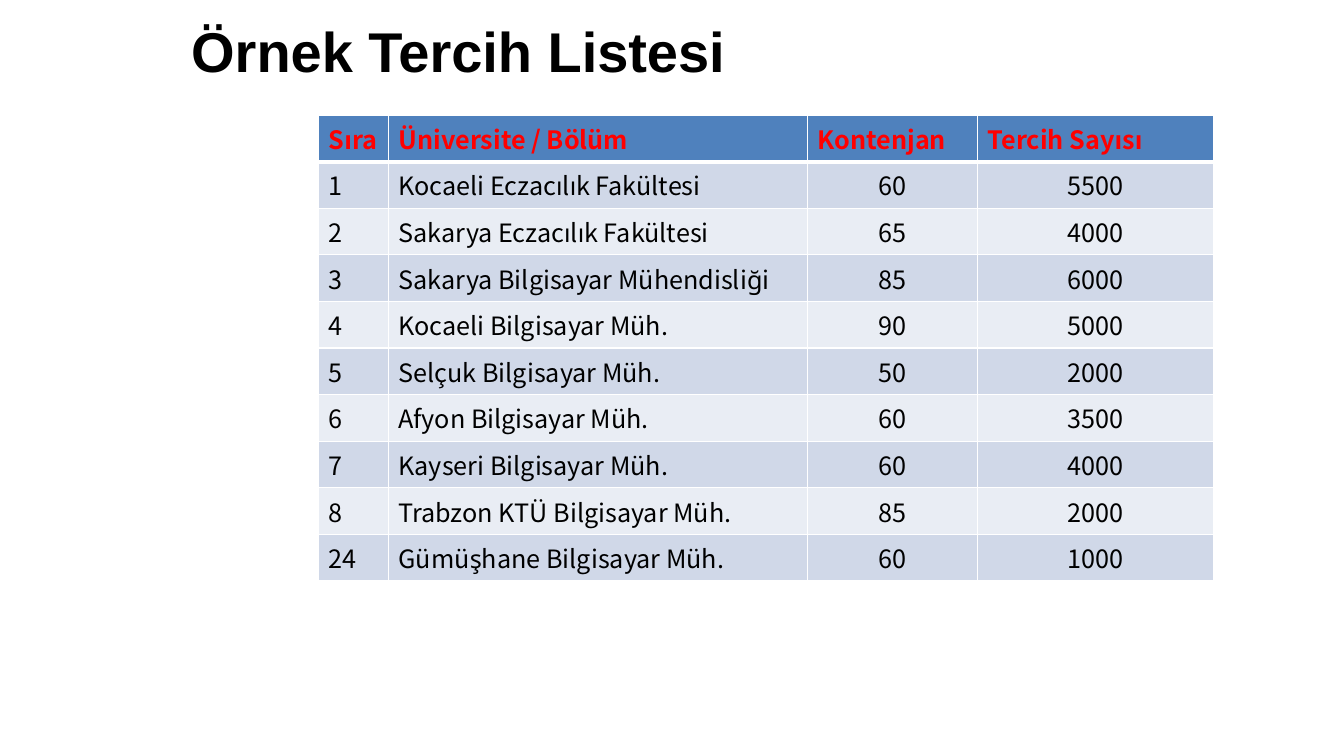
from lxml import etree
from pptx import Presentation
from pptx import util as u
from pptx.dml.color import RGBColor
from pptx.enum import text
from pptx.oxml import ns


def color(hex_string):
    return RGBColor.from_string(hex_string)


class ListSlide:
    title_font = "Arial"
    table_font = "Noto Sans CJK KR"
    black = "000000"
    header_text = "FF0000"
    header_fill = "4F81BD"
    band_fills = ("E9EDF4", "D0D8E8")
    border = "FFFFFF"

    def __init__(self, presentation):
        self.slide = presentation.slides.add_slide(presentation.slide_layouts[6])

    def format_runs(self, paragraph, font_name, size, hex_string, bold):
        for run in paragraph.runs:
            run.font.name = font_name
            run.font.size = u.Pt(size)
            run.font.bold = bold
            run.font.color.rgb = color(hex_string)

    def add_title(self, title, left, top, width, height):
        shape = self.slide.shapes.add_textbox(
            u.Cm(left), u.Cm(top), u.Cm(width), u.Cm(height))
        text_frame = shape.text_frame
        text_frame.word_wrap = True
        text_frame.vertical_anchor = text.MSO_ANCHOR.MIDDLE
        text_frame.text = title
        self.format_runs(text_frame.paragraphs[0], self.title_font, 40, self.black, True)

    def add_borders(self, cell, widths):
        properties = cell._tc.get_or_add_tcPr()
        for side, width in widths.items():
            line = etree.SubElement(properties, ns.qn(f"a:ln{side}"), w=str(u.Pt(width)))
            fill = etree.SubElement(line, ns.qn("a:solidFill"))
            etree.SubElement(fill, ns.qn("a:srgbClr"), val=self.border)

    def add_table(self, rows, left, top, column_widths, height):
        table = self.slide.shapes.add_table(
            len(rows), len(column_widths), u.Cm(left), u.Cm(top),
            u.Cm(sum(column_widths)), u.Cm(height)).table
        for column, width in zip(table.columns, column_widths):
            column.width = u.Cm(width)
        for row_index, values in enumerate(rows):
            table.rows[row_index].height = u.Cm(height / len(rows))
            for column_index, value in enumerate(values):
                self.fill_cell(table.cell(row_index, column_index), value,
                               row_index, column_index)

    def fill_cell(self, cell, value, row_index, column_index):
        header = row_index == 0
        self.add_borders(cell, {"L": 1, "R": 1, "T": 3 if row_index == 1 else 1,
                                "B": 3 if header else 1})
        cell.fill.solid()
        cell.fill.fore_color.rgb = color(
            self.header_fill if header else self.band_fills[row_index % 2])
        cell.text_frame.text = str(value)
        paragraph = cell.text_frame.paragraphs[0]
        if not header and column_index >= 2:
            paragraph.alignment = text.PP_ALIGN.CENTER
        self.format_runs(paragraph, self.table_font, 18,
                         self.header_text if header else self.black, header)


def main():
    presentation = Presentation()
    presentation.slide_width = u.Cm(33.87)
    presentation.slide_height = u.Cm(19.05)
    preferences = [
        ("Sıra", "Üniversite / Bölüm", "Kontenjan", "Tercih Sayısı"),
        (1, "Kocaeli Eczacılık Fakültesi", 60, 5500),
        (2, "Sakarya Eczacılık Fakültesi", 65, 4000),
        (3, "Sakarya Bilgisayar Mühendisliği", 85, 6000),
        (4, "Kocaeli Bilgisayar Müh.", 90, 5000),
        (5, "Selçuk Bilgisayar Müh.", 50, 2000),
        (6, "Afyon Bilgisayar Müh.", 60, 3500),
        (7, "Kayseri Bilgisayar Müh.", 60, 4000),
        (8, "Trabzon KTÜ Bilgisayar Müh.", 85, 2000),
        (24, "Gümüşhane Bilgisayar Müh.", 60, 1000),
    ]
    list_slide = ListSlide(presentation)
    list_slide.add_title("Örnek Tercih Listesi", 4.57, 0.84, 28.93, 0.86)
    list_slide.add_table(preferences, 8.03, 2.9, (1.76, 10.56, 4.29, 5.94), 11.74)
    presentation.save("out.pptx")


if __name__ == "__main__":
    main()
